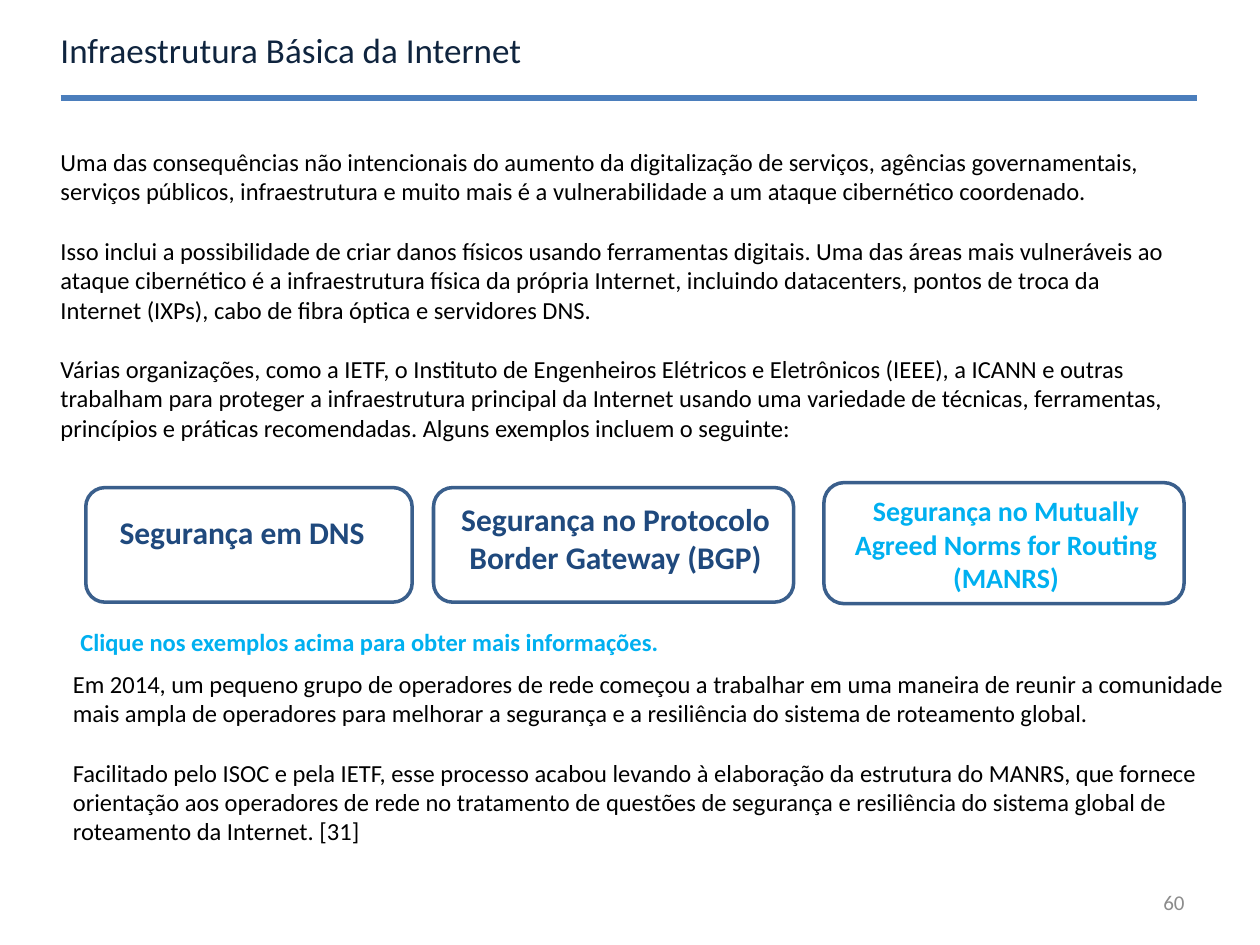
from pptx import Presentation
from pptx import util as u
from pptx.dml.color import RGBColor
from pptx.enum import shapes, text
from pptx.oxml.ns import qn
from lxml import etree

FONT = "Calibri"
COLORS = {
    "title": "0F243E",
    "rule": "4B7EBC",
    "body": "000000",
    "accent": "00B0F0",
    "label": "1F497D",
    "border": "3A5F8C",
    "card": "FFFFFF",
    "number": "8C8C8C",
}

INTRO = [
    "Uma das consequências não intencionais do aumento da digitalização de serviços, "
    "agências governamentais, serviços públicos, infraestrutura e muito mais é a "
    "vulnerabilidade a um ataque cibernético coordenado.",
    "Isso inclui a possibilidade de criar danos físicos usando ferramentas digitais. "
    "Uma das áreas mais vulneráveis ao ataque cibernético é a infraestrutura física da "
    "própria Internet, incluindo datacenters, pontos de troca da Internet (IXPs), cabo "
    "de fibra óptica e servidores DNS.",
    "Várias organizações, como a IETF, o Instituto de Engenheiros Elétricos e "
    "Eletrônicos (IEEE), a ICANN e outras trabalham para proteger a infraestrutura "
    "principal da Internet usando uma variedade de técnicas, ferramentas, princípios e "
    "práticas recomendadas. Alguns exemplos incluem o seguinte:",
]
CLOSING = [
    "Em 2014, um pequeno grupo de operadores de rede começou a trabalhar em uma maneira "
    "de reunir a comunidade mais ampla de operadores para melhorar a segurança e a "
    "resiliência do sistema de roteamento global.",
    "Facilitado pelo ISOC e pela IETF, esse processo acabou levando à elaboração da "
    "estrutura do MANRS, que fornece orientação aos operadores de rede no tratamento de "
    "questões de segurança e resiliência do sistema global de roteamento da Internet. [31]",
]
# Card frame, label frame (left, top, width, height in cm), label, size, colour, alignment
CARDS = [
    ((1.73, 9.83, 6.58, 2.31), (2.16, 10.21, 5.51, 1.02),
     "Segurança em DNS", 18, "label", text.PP_ALIGN.LEFT),
    ((8.74, 9.83, 7.26, 2.31), (8.84, 9.96, 7.14, 1.8),
     "Segurança no Protocolo Border Gateway (BGP)", 18, "label", text.PP_ALIGN.CENTER),
    ((16.61, 9.73, 7.26, 2.44), (16.71, 9.83, 7.14, 2.31),
     "Segurança no Mutually Agreed Norms for Routing (MANRS)", 16, "accent",
     text.PP_ALIGN.CENTER),
]


def color(name):
    return RGBColor.from_string(COLORS[name])


def add_text(page, frame, paragraphs, size, color_name, bold=False,
             align=text.PP_ALIGN.LEFT, anchor=text.MSO_ANCHOR.TOP):
    """Text box whose paragraphs are set one line apart."""
    box = page.shapes.add_textbox(*map(u.Cm, frame))
    body = box.text_frame
    body.word_wrap = True
    body.vertical_anchor = anchor
    body.text = "\n".join(paragraphs)
    for index, para in enumerate(body.paragraphs):
        para.alignment = align
        if index:
            para.space_before = u.Pt(size * 1.22)
        for span in para.runs:
            span.font.name = FONT
            span.font.size = u.Pt(size)
            span.font.bold = bold
            span.font.color.rgb = color(color_name)


def add_rule(page, left, right, top):
    rule = page.shapes.add_connector(
        shapes.MSO_CONNECTOR.STRAIGHT, u.Cm(left), u.Cm(top), u.Cm(right), u.Cm(top))
    rule.line.color.rgb = color("rule")
    rule.line.width = u.Pt(3.25)
    etree.SubElement(rule._element.spPr, qn("a:effectLst"))


def add_card(page, frame, label_frame, label, size, color_name, align):
    card = page.shapes.add_shape(
        shapes.MSO_SHAPE.ROUNDED_RECTANGLE, *map(u.Cm, frame))
    card.shadow.inherit = False
    card.fill.solid()
    card.fill.fore_color.rgb = color("card")
    card.line.color.rgb = color("border")
    card.line.width = u.Pt(2)
    add_text(page, label_frame, [label], size, color_name, bold=True, align=align)


def main():
    deck = Presentation()
    deck.slide_width, deck.slide_height = u.Cm(25.4), u.Cm(19.05)
    page = deck.slides.add_slide(deck.slide_layouts[6])

    # Header
    add_text(page, (0.97, 0.46, 23.16, 1.09), ["Infraestrutura Básica da Internet"],
             20, "title", anchor=text.MSO_ANCHOR.MIDDLE)
    add_rule(page, 1.22, 24.13, 1.98)

    # Introduction
    add_text(page, (0.97, 2.84, 22.91, 6.25), INTRO, 14, "body")

    # Examples
    for card in CARDS:
        add_card(page, *card)
    add_text(page, (1.37, 12.52, 15.21, 0.86),
             ["Clique nos exemplos acima para obter mais informações."],
             14, "accent", bold=True)

    # Closing text and page number
    add_text(page, (1.22, 13.36, 23.95, 3.84), CLOSING, 14, "body")
    add_text(page, (18.21, 17.68, 5.92, 1.02), ["60"], 12, "number",
             align=text.PP_ALIGN.RIGHT, anchor=text.MSO_ANCHOR.MIDDLE)

    deck.save("out.pptx")


if __name__ == "__main__":
    main()
